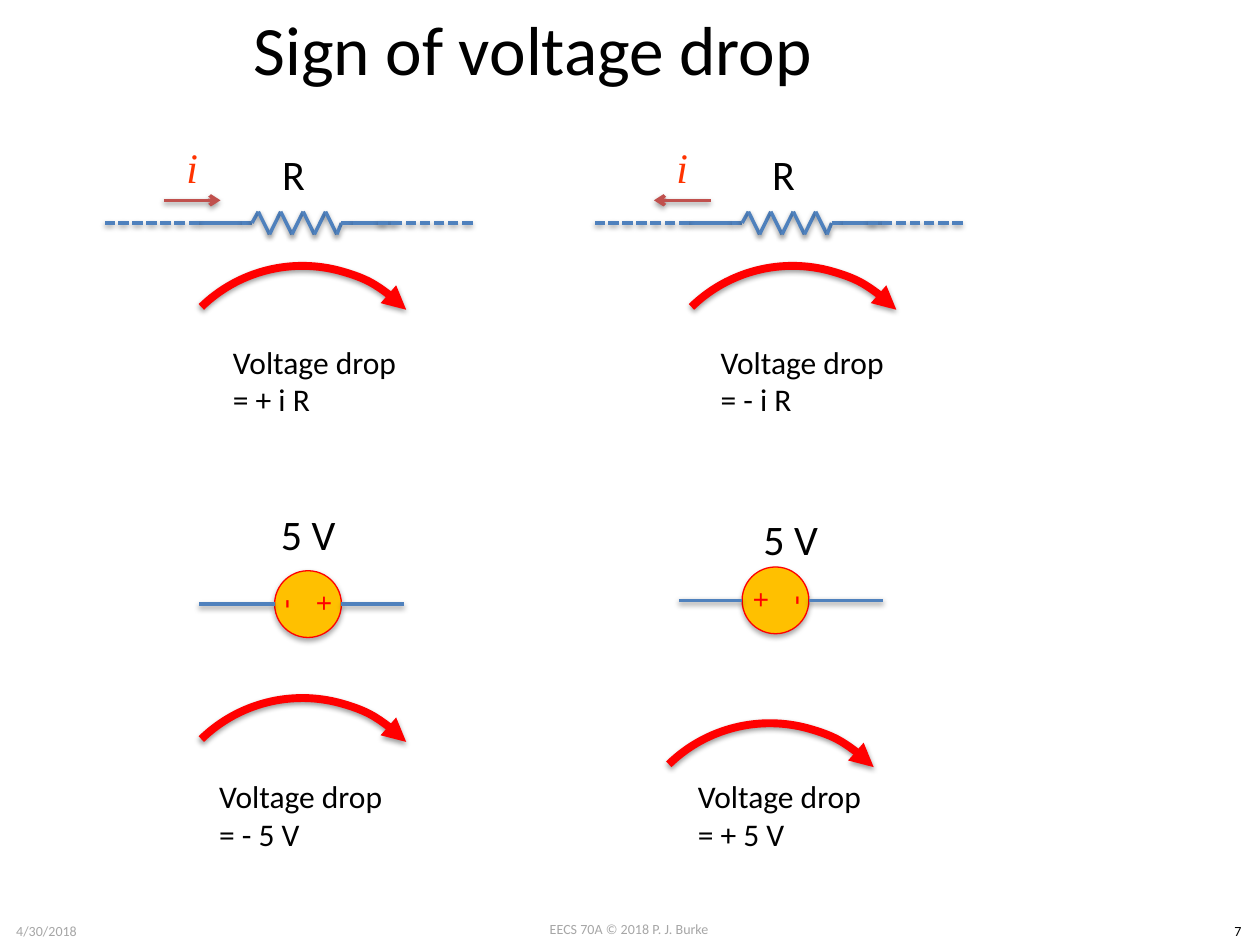
from itertools import pairwise

from lxml import etree
from pptx import Presentation
from pptx.dml.color import RGBColor
from pptx.enum.dml import MSO_LINE
from pptx.enum.shapes import MSO_CONNECTOR, MSO_SHAPE
from pptx.enum.text import MSO_ANCHOR, PP_ALIGN
from pptx.oxml.ns import qn
from pptx.util import Inches, Pt

STRAIGHT = MSO_CONNECTOR.STRAIGHT
DASH = MSO_LINE.SQUARE_DOT
ARC, CIRCLE = MSO_SHAPE.ARC, MSO_SHAPE.OVAL
LEFT, CENTER = PP_ALIGN.LEFT, PP_ALIGN.CENTER
TOP, MIDDLE = MSO_ANCHOR.TOP, MSO_ANCHOR.MIDDLE


class Theme:
    body, math = "Calibri", "Times New Roman"
    black, grey = "000000", "A6A6A6"
    wire, current, symbol = "4F81BD", "C0504D", "FF3300"
    red, gold = "FF0000", "FFC000"
    title, label, note, plus, footer = 39.6, 24, 18, 16.6, 8
    wire_width, arc_width, rim_width = 2, 4.5, 0.75


# Content: lengths in inches
TITLE = ("Sign of voltage drop", (0.83, 0, 6.8, 0.75))
FOOTERS = [
    ("EECS 70A © 2018 P. J. Burke", (3.83, 7.26, 2.33, 0.24), Theme.grey),
    ("4/30/2018", (0, 7.27, 0.74, 0.24), Theme.grey),
    ("7", (9.65, 7.27, 0.35, 0.24), Theme.black),
]
RESISTORS = [  # left end, current arrow start and end relative to it
    {"left": 0.83, "current": (0.47, 0.92)},
    {"left": 4.72, "current": (0.92, 0.47)},
]
SOURCES = [  # wire ends, circle corner, signs left to right, their turn, label corner
    {"ends": (1.58, 3.21), "circle": (2.18, 4.53), "signs": "-+", "turn": 90,
     "label": (2.13, 3.99)},
    {"ends": (5.39, 7.01), "circle": (5.89, 4.5), "signs": "+-", "turn": 270,
     "label": (5.96, 4.03)},
]
DROPS = [  # second line, text corner, arc corner
    ("= + i R", (1.75, 2.67), (1.25, 2.11)),
    ("= - i R", (5.62, 2.67), (5.14, 2.11)),
    ("= - 5 V", (1.64, 6.12), (1.25, 5.54)),
    ("= + 5 V", (5.44, 6.12), (4.96, 5.74)),
]
WIRE_Y, ZIGZAG_HEIGHT, ZIGZAG_STEP = 1.77, 0.09, 0.089
CIRCLE_SIZE, ARC_SIZE, ARC_TURN = 0.53, 2.3, 315.8

deck = Presentation()
deck.slide_width, deck.slide_height = Inches(10), Inches(7.5)
page = deck.slides.add_slide(deck.slide_layouts[6])


def color(value):
    return RGBColor.from_string(value)


def add_shadow(shape, opacity=38, distance=1.6):
    effects = etree.SubElement(shape._element.spPr, qn("a:effectLst"))
    outer = etree.SubElement(effects, qn("a:outerShdw"), blurRad=str(Pt(3.1)),
                             dist=str(Pt(distance)), dir="5400000", rotWithShape="0")
    black = etree.SubElement(outer, qn("a:srgbClr"), val=Theme.black)
    etree.SubElement(black, qn("a:alpha"), val=str(opacity * 1000))


def style_line(shape, ink, width, head=None):
    shape.line.color.rgb = color(ink)
    shape.line.width = Pt(width)
    if head:
        etree.SubElement(shape.line._get_or_add_ln(), qn("a:tailEnd"), type=head)


def add_line(start, end, ink=Theme.wire, dash=None, head=None):
    line = page.shapes.add_connector(STRAIGHT, *map(Inches, (*start, *end)))
    style_line(line, ink, Theme.wire_width, head)
    if dash:
        line.line.dash_style = dash
    add_shadow(line)


def add_text(text, at, size=Theme.label, ink=Theme.black, font=Theme.body, align=LEFT,
             anchor=TOP, italic=False, wrap=True, turn=0, inset=0.1):
    box = page.shapes.add_textbox(*map(Inches, at))
    box.rotation = turn
    frame = box.text_frame
    frame.word_wrap, frame.vertical_anchor = wrap, anchor
    frame.margin_left = frame.margin_right = Inches(inset)
    for index, words in enumerate(text.split("\n")):
        para = frame.add_paragraph() if index else frame.paragraphs[0]
        para.alignment = align
        span = para.add_run()
        span.text = words
        span.font.name, span.font.size = font, Pt(size)
        span.font.italic = italic
        span.font.color.rgb = color(ink)


def add_resistor(left, current):
    # Zigzag between two leads, with dashed wires beyond them
    peaks = [(left + 1.22 + ZIGZAG_STEP * step,
              WIRE_Y + (ZIGZAG_HEIGHT if step % 2 else -ZIGZAG_HEIGHT))
             for step in range(8)]
    before = [(left + x, WIRE_Y) for x in (0.75, 1.09, 1.17)]
    after = [(left + x, WIRE_Y) for x in (1.88, 1.97, 2.3)]
    for start, end in pairwise(before + peaks + after):
        add_line(start, end)
    for x in (0.75, 2.92):
        add_line((left + x, WIRE_Y), (left + x - 0.75, WIRE_Y), dash=DASH)
    # Labels and current arrow
    add_text("R", (left + 1.31, 1.13, 0.44, 0.5))
    start, end = ((left + x, 1.59) for x in current)
    add_line(start, end, ink=Theme.current, head="arrow")
    add_text("i", (left + 0.31, 1.02, 0.77, 0.61), ink=Theme.symbol, font=Theme.math,
             align=CENTER, anchor=MIDDLE, italic=True)


def add_source(ends, circle, signs, turn, label):
    left, top = circle
    middle = top + CIRCLE_SIZE / 2
    disc = page.shapes.add_shape(
        CIRCLE, *map(Inches, (left, top, CIRCLE_SIZE, CIRCLE_SIZE)))
    disc.fill.solid()
    disc.fill.fore_color.rgb = color(Theme.gold)
    style_line(disc, Theme.red, Theme.rim_width)
    add_shadow(disc, opacity=35, distance=1.8)
    for index, sign in enumerate(signs):
        add_text(sign, (left + 0.28 * index, top + 0.1, 0.26, 0.33),
                 size=Theme.plus if sign == "+" else Theme.note, ink=Theme.red,
                 align=CENTER, anchor=MIDDLE, turn=turn, inset=0)
    add_line((ends[0], middle), (left, middle))
    add_line((left + CIRCLE_SIZE, middle), (ends[1], middle))
    add_text("5 V", (*label, 0.72, 0.5))


def add_drop(value, text_corner, arc_corner):
    arc = page.shapes.add_shape(ARC, *map(Inches, (*arc_corner, ARC_SIZE, ARC_SIZE)))
    arc.rotation = ARC_TURN
    arc.fill.background()
    style_line(arc, Theme.red, Theme.arc_width, head="triangle")
    add_shadow(arc)
    add_text(f"Voltage drop\n{value}", (*text_corner, 1.51, 0.71), size=Theme.note,
             wrap=False)


# Footer and title
for words, place, ink in FOOTERS:
    add_text(words, place, size=Theme.footer, ink=ink, align=CENTER)
add_text(*TITLE, size=Theme.title, align=CENTER, anchor=MIDDLE)

# Circuits and their voltage drops
for resistor in RESISTORS:
    add_resistor(**resistor)
for source in SOURCES:
    add_source(**source)
for drop in DROPS:
    add_drop(*drop)

deck.save("out.pptx")
